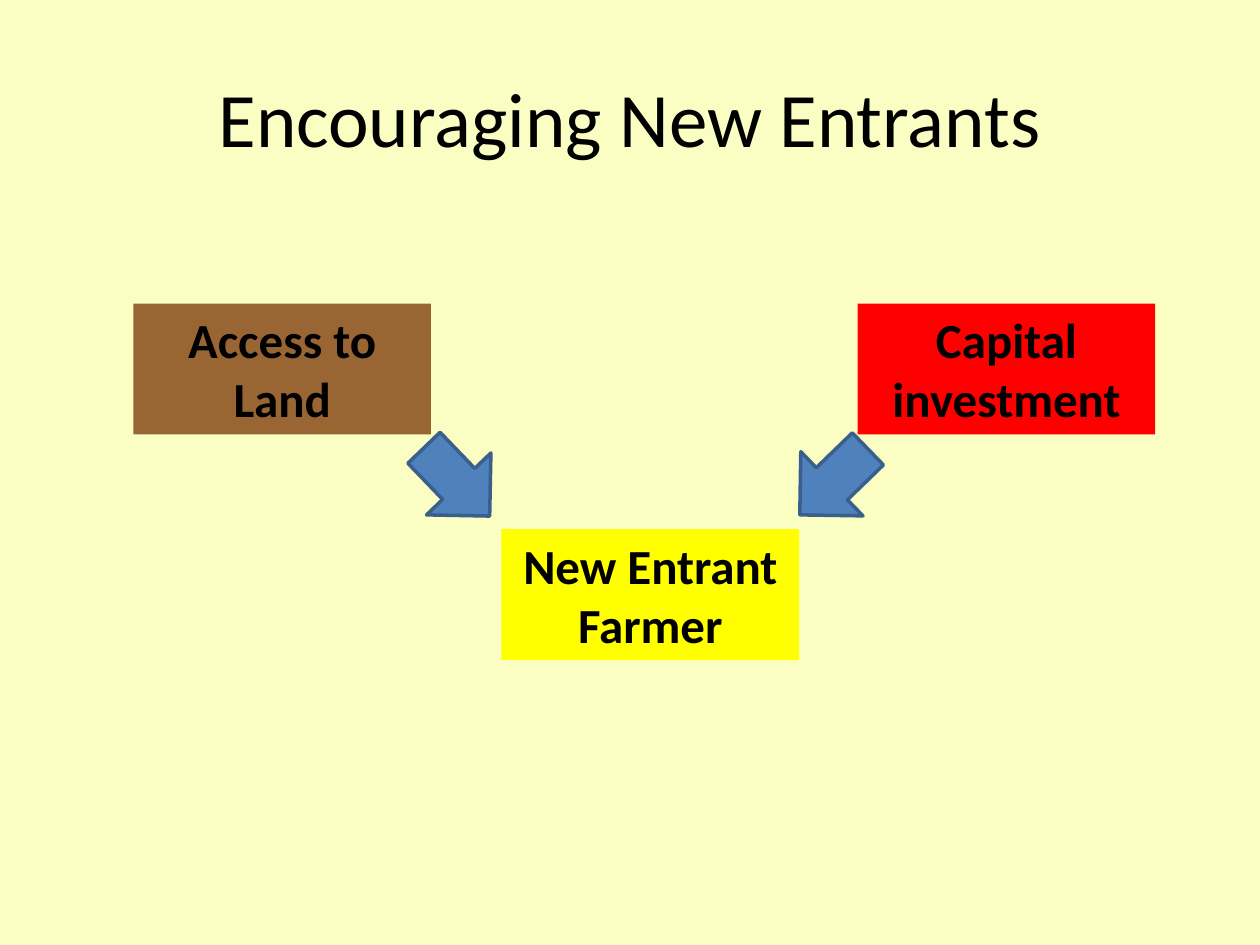
from dataclasses import dataclass

from pptx import Presentation
from pptx.dml.color import RGBColor as RGB
from pptx.enum.shapes import MSO_SHAPE as SHAPE
from pptx.enum.text import MSO_ANCHOR as ANCHOR, PP_ALIGN as ALIGN
from pptx.util import Cm, Pt


@dataclass(frozen=True)
class Theme:
    font: str = "Calibri"
    background: str = "FAFEC2"
    text: str = "000000"
    land: str = "996633"
    capital: str = "FF0000"
    farmer: str = "FFFF00"
    arrow: str = "4F81BD"
    arrow_line: str = "3A5F8C"
    title_size: int = 44
    label_size: int = 28


THEME = Theme()


def set_text(shape, text, size, bold=False, anchor=ANCHOR.TOP):
    tf = shape.text_frame
    tf.word_wrap = True
    tf.vertical_anchor = anchor
    p = tf.paragraphs[0]
    p.alignment = ALIGN.CENTER
    r = p.add_run()
    r.text = text
    r.font.name = THEME.font
    r.font.size = Pt(size)
    r.font.bold = bold
    r.font.color.rgb = RGB.from_string(THEME.text)


def add_filled(s, kind, box, fill):
    sp = s.shapes.add_shape(kind, *map(Cm, box))
    sp.shadow.inherit = False
    sp.fill.solid()
    sp.fill.fore_color.rgb = RGB.from_string(fill)
    return sp


def add_title(s, box, text):
    sp = s.shapes.add_textbox(*map(Cm, box))
    set_text(sp, text, THEME.title_size, anchor=ANCHOR.MIDDLE)


def add_label(s, box, text, fill):
    sp = add_filled(s, SHAPE.RECTANGLE, box, fill)
    sp.line.fill.background()
    set_text(sp, text, THEME.label_size, bold=True)


def add_arrow(s, box, rotation):
    sp = add_filled(s, SHAPE.DOWN_ARROW, box, THEME.arrow)
    sp.line.color.rgb = RGB.from_string(THEME.arrow_line)
    sp.line.width = Pt(2)
    sp.rotation = rotation


def add_diagram(s, box):
    """Two labels in the top corners, with arrows down to the label below."""
    left, top, width, height = box
    label_w, label_h = 6, 2.64
    arrow_w = 1.8
    right_x = left + width - label_w
    farmer_x = left + 7.42
    arrow_y = top + label_h
    farmer_y = top + height - label_h
    arrow_h = farmer_y - arrow_y

    for x, y, text, fill in (
        (left, top, "Access to Land", THEME.land),
        (right_x, top, "Capital investment", THEME.capital),
        (farmer_x, farmer_y, "New Entrant Farmer", THEME.farmer),
    ):
        add_label(s, (x, y, label_w, label_h), text, fill)

    for x, rotation in (
        (farmer_x - arrow_w, 316.1),
        (farmer_x + label_w - 0.2, 45.9),
    ):
        add_arrow(s, (x, arrow_y, arrow_w, arrow_h), rotation)


def main():
    prs = Presentation()
    prs.slide_width, prs.slide_height = Cm(25.4), Cm(19.05)
    s = prs.slides.add_slide(prs.slide_layouts[6])
    s.background.fill.solid()
    s.background.fill.fore_color.rgb = RGB.from_string(THEME.background)
    add_title(s, (1.27, 0.76, 22.86, 3.18), "Encouraging New Entrants")
    add_diagram(s, (2.69, 6.12, 20.6, 7.19))
    prs.save("out.pptx")


if __name__ == "__main__":
    main()
